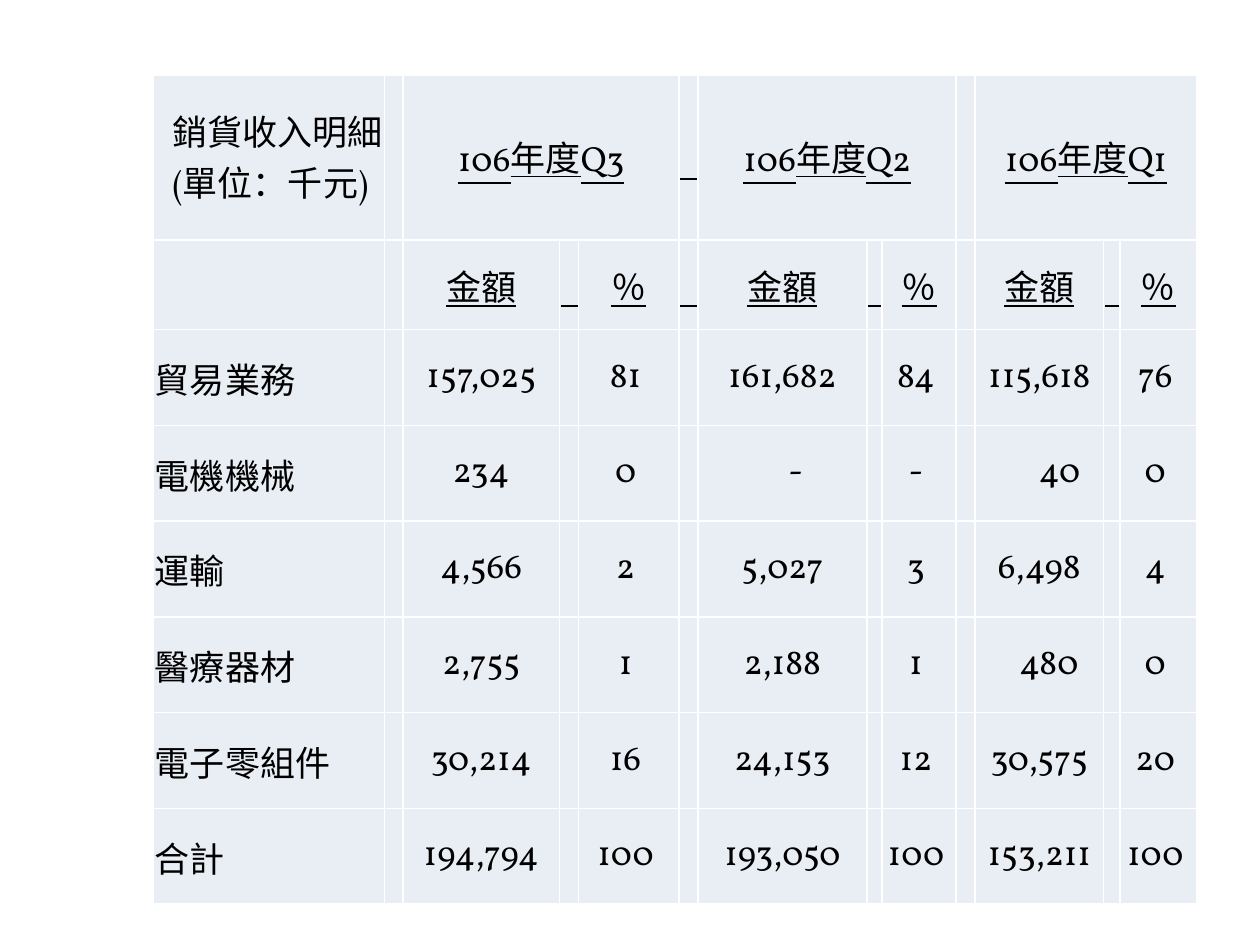
from pptx import Presentation
from pptx.dml.color import RGBColor
from pptx.enum.text import MSO_ANCHOR, PP_ALIGN
from pptx.util import Inches, Pt

LEFT, CENTER, JUSTIFY = PP_ALIGN.LEFT, PP_ALIGN.CENTER, PP_ALIGN.JUSTIFY
MIDDLE = MSO_ANCHOR.MIDDLE
FONT, INK, CELL_FILL = "Vollkorn", "000000", "E9EDF4"

COL_WIDTHS = [1.83, 0.15, 1.24, 0.15, 0.8, 0.15, 1.34, 0.12, 0.59,
              0.15, 1.02, 0.13, 0.61]
ROW_HEIGHTS = [0.79, 0.71] + [0.76] * 6
QUARTERS = ["106年度Q3", "106年度Q2", "106年度Q1"]
QUARTER_COLS = [2, 6, 10]  # amount column; its percentage is two further right
SALES = [
    ("貿易業務", ["157,025", "81", "161,682", "84", "115,618", "76"]),
    ("電機機械", ["234", "0", "-", "-", "40", "0"]),
    ("運輸", ["4,566", "2", "5,027", "3", "6,498", "4"]),
    ("醫療器材", ["2,755", "1", "2,188", "1", "480", "0"]),
    ("電子零組件", ["30,214", "16", "24,153", "12", "30,575", "20"]),
    ("合計", ["194,794", "100", "193,050", "100", "153,211", "100"]),
]
# Short amounts that sit right of the column centre: left inset
AMOUNT_INSETS = {"-": 0.22, "40": 0.33, "480": 0.16}
PERCENT_INSET = 0.06
# Narrow cells whose blank is underlined
RULED_GAPS = [(0, 5), (1, 3), (1, 5), (1, 7), (1, 11)]


def rgb(color):
    return RGBColor.from_string(color)


def write(cell, text, align=CENTER, underline=False, left=0.01, right=0.01):
    cell.margin_left, cell.margin_right = Inches(left), Inches(right)
    p = cell.text_frame.paragraphs[0]
    p.alignment = align
    r = p.add_run()
    r.text = text
    r.font.name, r.font.size = FONT, Pt(20)
    r.font.color.rgb = rgb(INK)
    r.font.underline = underline


def add_sales_table(s):
    frame = s.shapes.add_table(len(ROW_HEIGHTS), len(COL_WIDTHS),
                               Inches(1.22), Inches(0.6),
                               Inches(sum(COL_WIDTHS)), Inches(sum(ROW_HEIGHTS)))
    table = frame.table
    table.first_row = table.horz_banding = False
    for column, width in zip(table.columns, COL_WIDTHS):
        column.width = Inches(width)
    for row, height in zip(table.rows, ROW_HEIGHTS):
        row.height = Inches(height)
    for cell in table.iter_cells():
        cell.fill.solid()
        cell.fill.fore_color.rgb = rgb(CELL_FILL)
        cell.vertical_anchor = MIDDLE
        cell.margin_left = cell.margin_right = cell.margin_top = Inches(0.01)
        cell.margin_bottom = 0
    return table


def fill_headers(table):
    write(table.cell(0, 0), "銷貨收入明細(單位：千元)", align=LEFT, left=0.15)
    for col, quarter in zip(QUARTER_COLS, QUARTERS):
        table.cell(0, col).merge(table.cell(0, col + 2))
        write(table.cell(0, col), quarter, underline=True)
        write(table.cell(1, col), "金額", underline=True)
        write(table.cell(1, col + 2), "％", underline=True)
    for row, col in RULED_GAPS:
        write(table.cell(row, col), "\u3000", underline=True)


def fill_sales(table):
    for row, (label, values) in enumerate(SALES, start=2):
        write(table.cell(row, 0), label, align=JUSTIFY)
        for i, col in enumerate(QUARTER_COLS):
            amount, percent = values[2 * i:2 * i + 2]
            write(table.cell(row, col), amount,
                  left=AMOUNT_INSETS.get(amount, 0.01))
            write(table.cell(row, col + 2), percent, right=PERCENT_INSET)


def main():
    prs = Presentation()
    prs.slide_width, prs.slide_height = Inches(10), Inches(7.5)
    s = prs.slides.add_slide(prs.slide_layouts[6])
    table = add_sales_table(s)
    fill_headers(table)
    fill_sales(table)
    prs.save("out.pptx")


if __name__ == "__main__":
    main()
